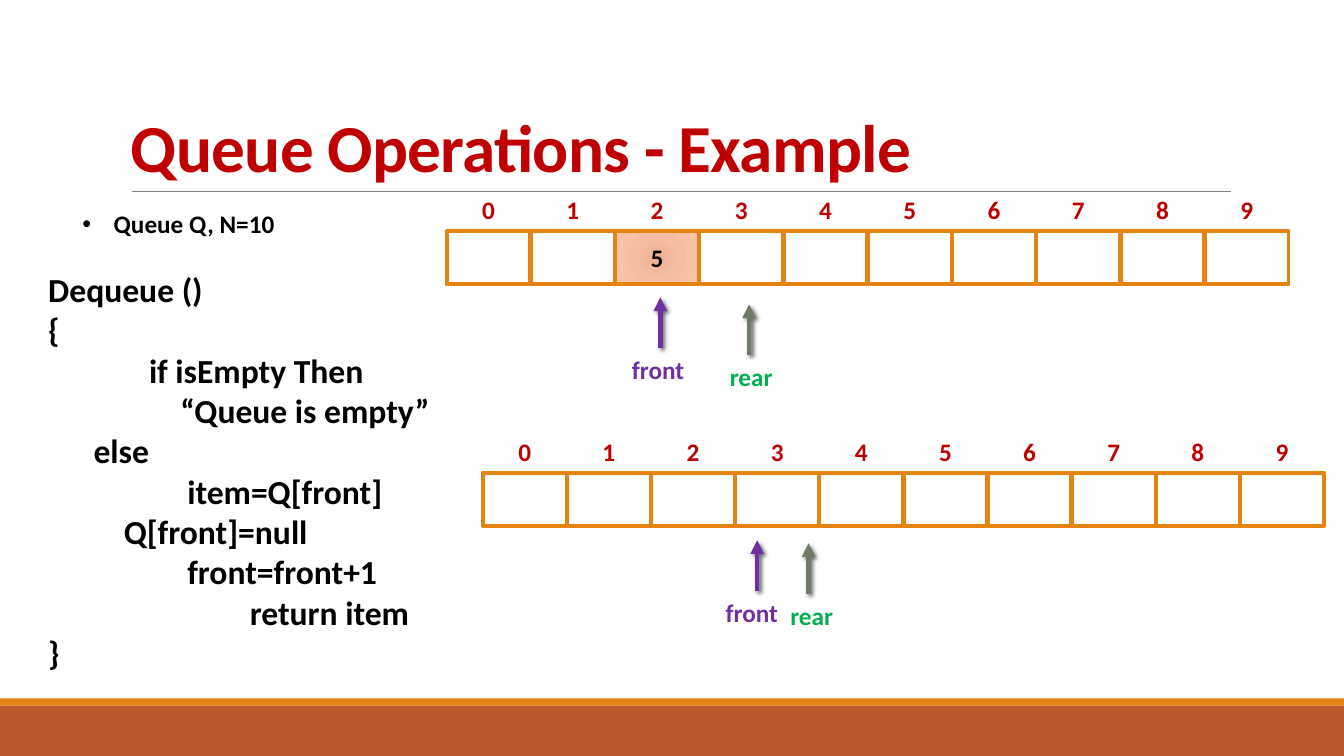
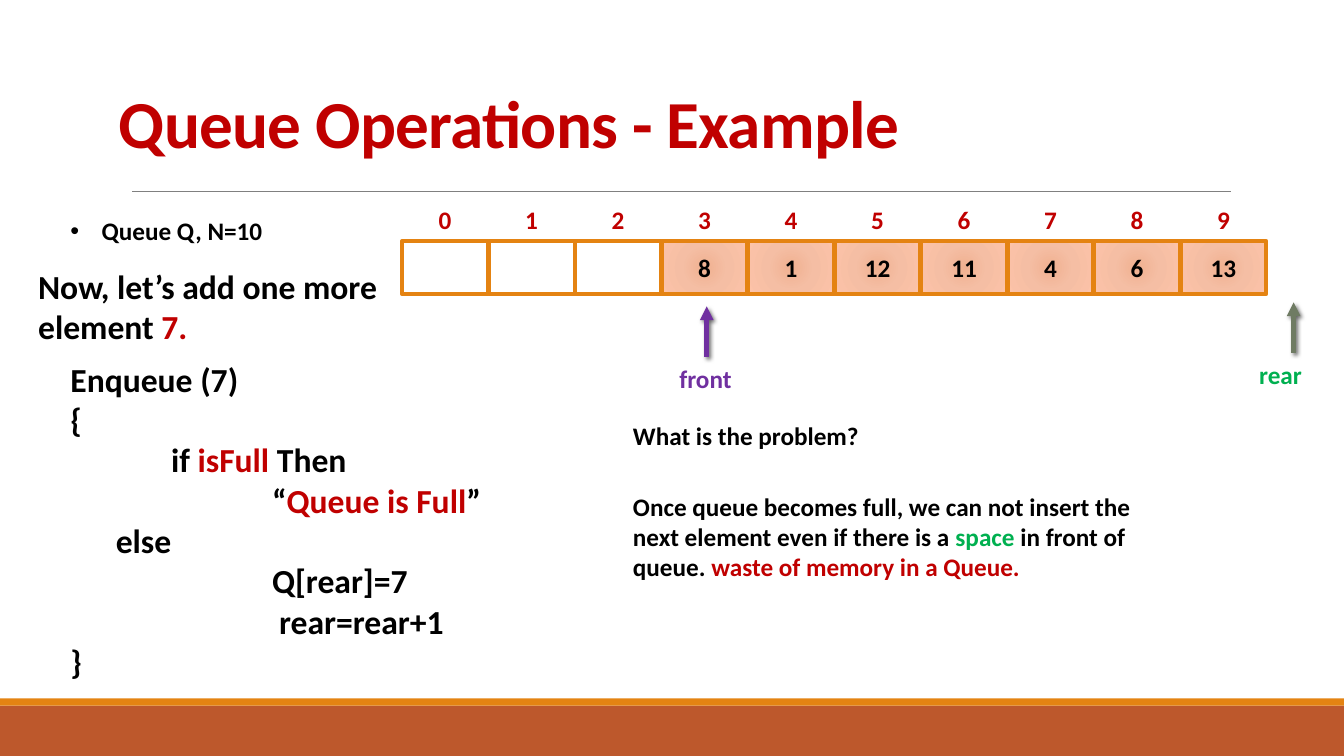
"""Build two slides that walk through dequeue and enqueue on an array queue."""
import dataclasses

import pptx
import pptx.dml.color
import pptx.enum.shapes
import pptx.enum.text
import pptx.oxml
import pptx.oxml.ns
import pptx.util

Inches = pptx.util.Inches
Pt = pptx.util.Pt
qn = pptx.oxml.ns.qn
Align = pptx.enum.text.PP_ALIGN
Anchor = pptx.enum.text.MSO_ANCHOR


@dataclasses.dataclass(frozen=True)
class Theme:
    font: str = "Calibri"
    black: str = "000000"
    white: str = "FFFFFF"
    red: str = "C00000"
    green: str = "00B050"
    purple: str = "7030A0"
    olive: str = "6F7B63"
    orange: str = "E48312"
    rust: str = "BD582C"
    rule: str = "808080"
    peach: tuple = ((0, "F0B191"), (45, "F5BEA4"), (100, "FDC3A8"))
    title_size: int = 48
    code_size: int = 24
    body_size: int = 18


THEME = Theme()


def color(value):
    return pptx.dml.color.RGBColor.from_string(value)


def element(tag, attributes="", inner=""):
    return pptx.oxml.parse_xml(
        f'<a:{tag} {pptx.oxml.ns.nsdecls("a")} {attributes}>{inner}</a:{tag}>')


class QueueDeck:
    CELL_COUNT = 10
    CELL_HEIGHT = 0.53
    INDEX_WIDTH = 0.34
    ARROW_LENGTH = 0.5

    def __init__(self):
        self.deck = pptx.Presentation()
        self.deck.slide_width = Inches(13.33)
        self.deck.slide_height = Inches(7.5)
        self.page = None

    def add_page(self, title, left, top, height):
        self.page = self.deck.slides.add_slide(self.deck.slide_layouts[6])
        self.rectangle(0, 7, 13.33, 0.5, THEME.rust)
        self.rectangle(0, 6.93, 13.33, 0.07, THEME.orange)
        self.line((1.31, 1.9), (12.21, 1.9), THEME.rule, 0.5)
        box = self.text(left, top, 11, height, [title], THEME.title_size, THEME.red)
        box.text_frame.vertical_anchor = Anchor.BOTTOM
        para = box.text_frame.paragraphs[0]
        para.line_spacing = 0.85
        para.runs[0].font._element.set("spc", "-50")

    def rectangle(self, left, top, width, height, fill):
        shape = self.page.shapes.add_shape(
            pptx.enum.shapes.MSO_SHAPE.RECTANGLE,
            Inches(left), Inches(top), Inches(width), Inches(height))
        shape.shadow.inherit = False
        shape.fill.solid()
        shape.fill.fore_color.rgb = color(fill)
        shape.line.fill.background()
        return shape

    def line(self, start, end, stroke, width):
        connector = self.page.shapes.add_connector(
            pptx.enum.shapes.MSO_CONNECTOR.STRAIGHT,
            *(Inches(length) for length in (*start, *end)))
        connector.line.color.rgb = color(stroke)
        connector.line.width = Pt(width)
        connector.element.spPr.append(element("effectLst"))
        return connector

    def style(self, span, size, ink):
        span.font.name = THEME.font
        span.font.size = Pt(size)
        span.font.bold = True
        span.font.color.rgb = color(ink)

    def text(self, left, top, width, height, lines, size=THEME.body_size, ink=THEME.black):
        box = self.page.shapes.add_textbox(
            Inches(left), Inches(top), Inches(width), Inches(height))
        frame = box.text_frame
        frame.word_wrap = True
        for number, line in enumerate(lines):
            para = frame.add_paragraph() if number else frame.paragraphs[0]
            for words, span_ink in [(line, ink)] if isinstance(line, str) else line:
                span = para.add_run()
                span.text = words
                self.style(span, size, span_ink)
        return box

    def bullet(self, left, top, words):
        box = self.text(left, top, 2.47, 0.4, [words])
        properties = box.text_frame.paragraphs[0]._p.get_or_add_pPr()
        properties.set("marL", str(Inches(0.31)))
        properties.set("indent", str(-Inches(0.31)))
        properties.append(element("buFont", 'typeface="Arial"'))
        properties.append(element("buChar", 'char="•"'))

    def code(self, left, top, width, height, lines):
        box = self.text(left, top, width, height,
                        [line for _, line in lines], THEME.code_size)
        for para, (indent, _) in zip(box.text_frame.paragraphs, lines):
            para._p.get_or_add_pPr().set("marL", str(Inches(indent)))

    def cell(self, left, top, width, value):
        shape = self.rectangle(left, top, width, self.CELL_HEIGHT, THEME.white)
        shape.line.color.rgb = color(THEME.orange)
        shape.line.width = Pt(2.75)
        if value is None:
            return
        stops = "".join(
            f'<a:gs pos="{place * 1000}"><a:srgbClr val="{tint}"/></a:gs>'
            for place, tint in THEME.peach)
        centre = " ".join(f'{side}="100000"' for side in "ltrb")
        solid = shape.element.spPr.find(qn("a:solidFill"))
        shape.element.spPr.replace(solid, element(
            "gradFill", 'rotWithShape="1"',
            f'<a:gsLst>{stops}</a:gsLst>'
            f'<a:path path="circle"><a:fillToRect {centre}/></a:path>'))
        frame = shape.text_frame
        frame.text = value
        frame.vertical_anchor = Anchor.MIDDLE
        frame.paragraphs[0].alignment = Align.CENTER
        self.style(frame.paragraphs[0].runs[0], THEME.body_size, THEME.black)

    def queue(self, first, last, top, width, values):
        pitch = (last - first) / (self.CELL_COUNT - 1)
        for index in range(self.CELL_COUNT):
            left = first + index * pitch
            self.cell(left, top, width, values.get(index))
            label = self.text(left + (width - self.INDEX_WIDTH) / 2, top - 0.41,
                              self.INDEX_WIDTH, 0.4, [str(index)], ink=THEME.red)
            label.text_frame.paragraphs[0].alignment = Align.CENTER

    def pointer(self, x, tip, label_left, name, stroke, ink):
        arrow = self.line((x, tip + self.ARROW_LENGTH), (x, tip), stroke, 3.25)
        properties = arrow.element.spPr
        properties.find(qn("a:ln")).append(element("tailEnd", 'type="triangle"'))
        properties.find(qn("a:effectLst")).append(element(
            "outerShdw",
            f'blurRad="{Pt(3)}" dist="{Pt(2)}" dir="2700000" rotWithShape="0"',
            f'<a:srgbClr val="{THEME.black}"><a:alpha val="60000"/></a:srgbClr>'))
        self.text(label_left, tip + 0.52, 0.76, 0.4, [name], ink=ink)

    def front(self, x, tip, label_left):
        self.pointer(x, tip, label_left, "front", THEME.purple, THEME.purple)

    def rear(self, x, tip, label_left):
        self.pointer(x, tip, label_left, "rear", THEME.olive, THEME.green)


def add_dequeue(show):
    show.add_page("Queue Operations - Example", 1.2, 0.31, 1.59)
    show.queue(4.43, 11.95, 2.29, 0.83, {2: "5"})
    show.front(6.55, 2.95, 6.17)
    show.rear(7.43, 3.02, 7.14)
    show.bullet(0.72, 2.02, "Queue Q, N=10")
    show.code(0.38, 2.62, 4.24, 4.14, [
        (0, "Dequeue ()"),
        (0, "{"),
        (1, "if isEmpty Then"),
        (1.31, "“Queue is empty”"),
        (0.45, "else"),
        (1.38, "item=Q[front]"),
        (0.75, "Q[front]=null"),
        (1.38, "front=front+1"),
        (2, "return item"),
        (0, "}"),
    ])
    show.queue(4.79, 12.3, 4.69, 0.83, {})
    show.front(7.51, 5.36, 7.1)
    show.rear(8.02, 5.39, 7.74)


def add_enqueue(show):
    show.add_page("Queue Operations - Example", 1.08, 0.48, 1.18)
    show.bullet(0.6, 2.09, "Queue Q, N=10")
    show.text(0.28, 2.59, 3.64, 0.91, [
        [("Now, let’s add one more element ", THEME.black), ("7.", THEME.red)],
    ], THEME.code_size)
    values = dict(enumerate(["8", "1", "12", "11", "4", "6", "13"], start=3))
    show.queue(3.99, 11.71, 2.39, 0.85, values)
    show.front(7.01, 3.04, 6.64)
    show.rear(12.83, 3, 12.39)
    show.code(0.6, 3.51, 4.74, 3.33, [
        (0, "Enqueue (7)"),
        (0, "{"),
        (1, [("if ", THEME.black), ("isFull ", THEME.red), ("Then", THEME.black)]),
        (2, [("“", THEME.black), ("Queue is Full", THEME.red), ("”", THEME.black)]),
        (0.45, "else"),
        (2, "Q[rear]=7"),
        (2.07, "rear=rear+1"),
        (0, "}"),
    ])
    show.text(6.18, 4.12, 5.44, 0.4, ["What is the problem?"])
    show.text(6.18, 4.82, 5.44, 1.31, [[
        ("Once queue becomes full, we can not insert the next element "
         "even if there is a ", THEME.black),
        ("space", THEME.green),
        (" in front of queue. ", THEME.black),
        ("waste of memory in a Queue.", THEME.red),
    ]])


def main():
    show = QueueDeck()
    add_dequeue(show)
    add_enqueue(show)
    show.deck.save("out.pptx")


if __name__ == "__main__":
    main()
